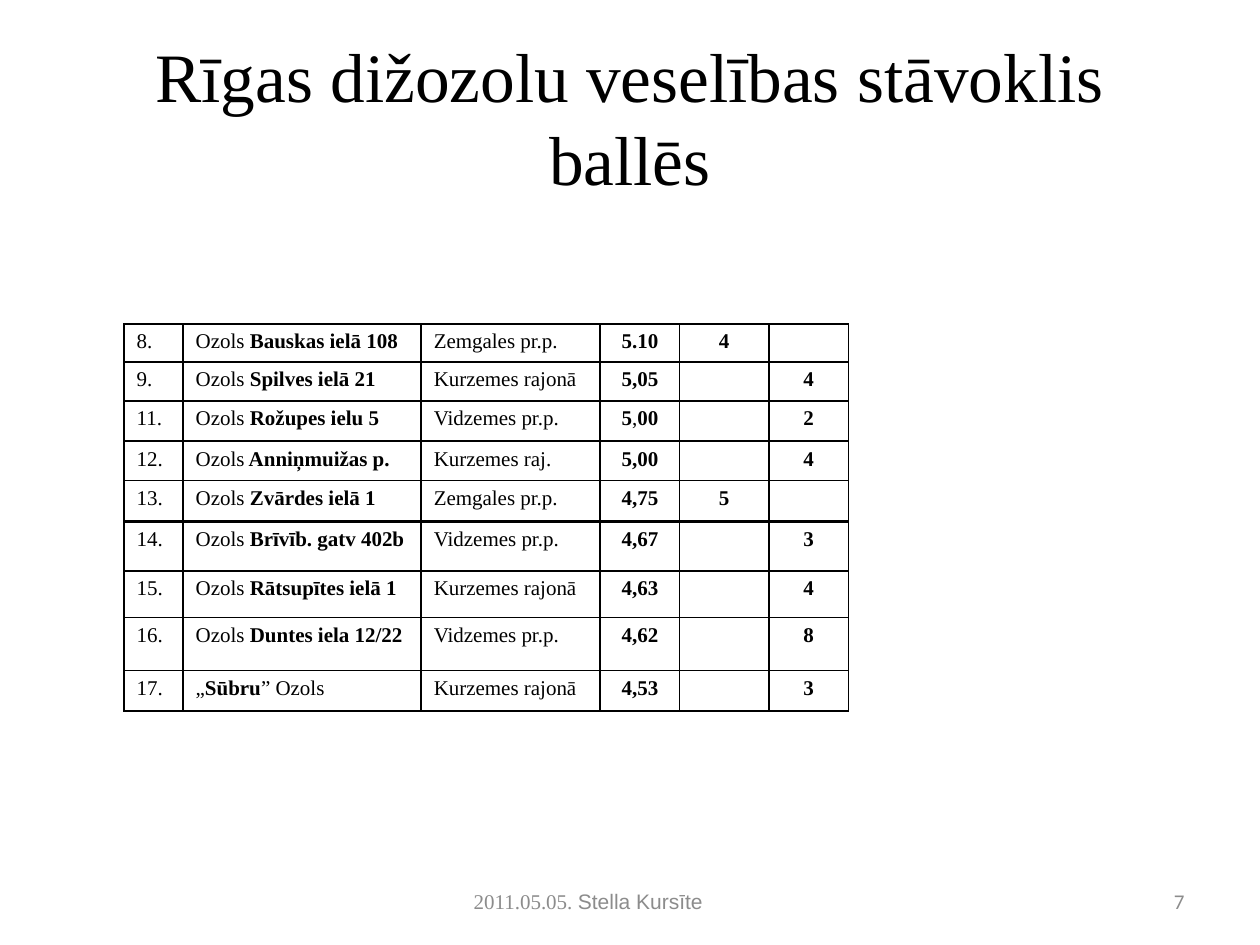
from lxml.etree import SubElement
from pptx import Presentation
from pptx.dml.color import RGBColor
from pptx.enum.text import MSO_ANCHOR, PP_ALIGN
from pptx.oxml.ns import qn
from pptx.util import Cm, Pt

COLORS = {"text": "000000", "muted": "8C8C8C", "border": "000000"}
SERIF = "Times New Roman"
COLUMNS = [1.19, 4.8, 3.61, 1.6, 1.8, 1.6]
FIRST_CENTERED = 3

UPPER_OAKS = [
    (0.76, "8.", "Ozols *Bauskas ielā 108", "Zemgales pr.p.", "*5.10", "*4", ""),
    (0.79, "9.", "Ozols *Spilves ielā 21", "Kurzemes rajonā", "*5,05", "", "*4"),
    (0.81, "11.", "Ozols *Rožupes ielu 5", "Vidzemes pr.p.", "*5*,*00", "", "*2"),
    (0.79, "12.", "Ozols* Anniņmuižas p.", "Kurzemes raj.", "*5,00", "", "*4"),
    (0.81, "13.", "Ozols *Zvārdes ielā 1", "Zemgales pr.p.", "*4,75", "*5", ""),
]
LOWER_OAKS = [
    (0.99, "14.", "Ozols *Brīvīb. gatv 402b", "Vidzemes pr.p.", "*4,67", "", "*3"),
    (0.94, "15.", "Ozols *Rātsupītes ielā 1", "Kurzemes rajonā", "*4,63", "", "*4"),
    (1.07, "16.", "Ozols *Duntes iela 12/22", "Vidzemes pr.p.", "*4,62", "", "*8"),
    (0.81, "17.", "„*Sūbru*” Ozols", "Kurzemes rajonā", "*4,53", "", "*3"),
]


def add_run(p, text, color="text", **formats):
    r = p.add_run()
    r.text = text
    for name, value in {"name": SERIF, "size": Pt(12), "bold": False, **formats}.items():
        setattr(r.font, name, value)
    r.font.color.rgb = RGBColor.from_string(COLORS[color])


def add_text(slide, box, align, runs):
    tf = slide.shapes.add_textbox(*map(Cm, box)).text_frame
    tf.word_wrap = True
    tf.vertical_anchor = MSO_ANCHOR.MIDDLE
    p = tf.paragraphs[0]
    p.alignment = align
    for text, formats in runs:
        add_run(p, text, **formats)


def add_title(slide, box):
    add_text(slide, box, PP_ALIGN.CENTER,
             [("Rīgas dižozolu veselības stāvoklis ballēs", {"size": Pt(39.6)})])


def add_footer(slide, box):
    left, top, width, height = box
    muted = {"color": "muted"}
    add_text(slide, (left, top + 0.13, 5.92, height - 0.26), PP_ALIGN.LEFT,
             [("2011.05.05. ", muted), ("Stella Kursīte", {**muted, "name": "Arial"})])
    add_text(slide, (left + width - 5.92, top, 5.92, height), PP_ALIGN.RIGHT,
             [("7", {**muted, "name": "Calibri"})])


def add_borders(cell):
    tc_pr = cell._tc.get_or_add_tcPr()
    for side in ("lnL", "lnR", "lnT", "lnB"):
        ln = SubElement(tc_pr, qn(f"a:{side}"), w=str(Pt(1)))
        fill = SubElement(ln, qn("a:solidFill"))
        SubElement(fill, qn("a:srgbClr"), val=COLORS["border"])


def fill_cell(cell, text, align):
    add_borders(cell)
    cell.fill.background()
    p = cell.text_frame.paragraphs[0]
    p.alignment = align
    for i, part in enumerate(text.split("*")):
        if part:
            add_run(p, part, bold=i % 2 == 1)
    if not text:
        SubElement(p._p, qn("a:endParaRPr"), sz="1200")


def add_oak_table(slide, left, top, oaks):
    height = sum(oak[0] for oak in oaks)
    box = (left, top, sum(COLUMNS), height)
    table = slide.shapes.add_table(len(oaks), len(COLUMNS), *map(Cm, box)).table
    table.first_row = table.horz_banding = False
    for column, width in zip(table.columns, COLUMNS):
        column.width = Cm(width)
    for row, (row_height, *texts) in zip(table.rows, oaks):
        row.height = Cm(row_height)
        for i, (cell, text) in enumerate(zip(row.cells, texts)):
            align = PP_ALIGN.CENTER if i >= FIRST_CENTERED else PP_ALIGN.LEFT
            fill_cell(cell, text, align)
    return top + height


def main():
    prs = Presentation()
    prs.slide_width, prs.slide_height = Cm(25.4), Cm(19.05)
    s = prs.slides.add_slide(prs.slide_layouts[6])
    add_footer(s, (9.3, 17.65, 14.83, 1.02))
    add_title(s, (1.27, 0.76, 22.86, 3.18))
    bottom = add_oak_table(s, 2.5, 6.53, UPPER_OAKS)
    add_oak_table(s, 2.5, bottom + 0.03, LOWER_OAKS)
    prs.save("out.pptx")


if __name__ == "__main__":
    main()
